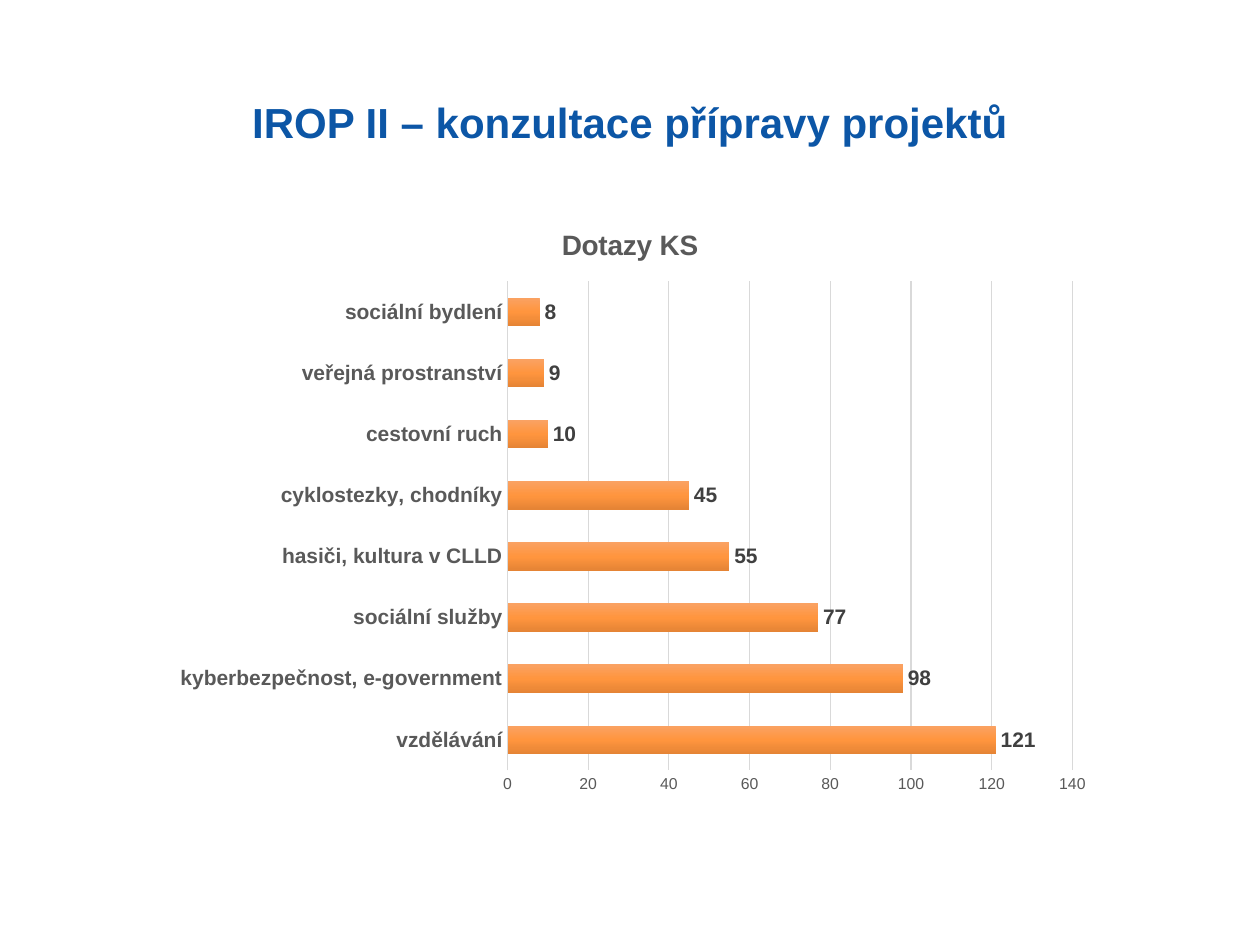
import pptx
import pptx.chart.data
import pptx.dml.color
import pptx.enum.chart
import pptx.enum.text
import pptx.oxml
import pptx.oxml.ns
import pptx.util
from pptx.util import Pt

# Content
TITLE = "IROP II – konzultace přípravy projektů"
CHART_TITLE = "Dotazy KS"
QUERIES = [
    ("vzdělávání", 121),
    ("kyberbezpečnost, e-government", 98),
    ("sociální služby", 77),
    ("hasiči, kultura v CLLD", 55),
    ("cyklostezky, chodníky", 45),
    ("cestovní ruch", 10),
    ("veřejná prostranství", 9),
    ("sociální bydlení", 8),
]
BAR_GRADIENT = [(0, "FAA263"), (50, "FF953E"), (100, "E58435")]
PLOT_LAYOUT = {"x": 0.37, "y": 0.13, "w": 0.6, "h": 0.81}
FONT = "Arial"
GRAY, GRID = "595959", "D9D9D9"


def color(value):
    return pptx.dml.color.RGBColor.from_string(value)


def style(font, size, value, bold=False):
    font.name, font.size, font.bold = FONT, Pt(size), bold
    font.color.rgb = color(value)


def set_line(line, value, width):
    line.color.rgb = color(value)
    line.width = Pt(width)


def set_gradient(series):
    stops = "".join(
        f'<a:gs pos="{position * 1000}"><a:srgbClr val="{value}"/></a:gs>'
        for position, value in BAR_GRADIENT)
    gradient = pptx.oxml.parse_xml(
        f'<a:gradFill {pptx.oxml.ns.nsdecls("a")} rotWithShape="1">'
        f'<a:gsLst>{stops}</a:gsLst><a:lin ang="5400000" scaled="0"/></a:gradFill>')
    series.format.fill.solid()
    properties = series.format.fill._xPr
    solid = properties.find(pptx.oxml.ns.qn("a:solidFill"))
    properties.replace(solid, gradient)


def set_plot_layout(chart):
    area = chart._chartSpace.chart.plotArea
    for layout in area.findall(pptx.oxml.ns.qn("c:layout")):
        area.remove(layout)
    modes = '<c:xMode val="edge"/><c:yMode val="edge"/>'
    values = "".join(f'<c:{key} val="{value}"/>' for key, value in PLOT_LAYOUT.items())
    area.insert(0, pptx.oxml.parse_xml(
        f'<c:layout {pptx.oxml.ns.nsdecls("c")}><c:manualLayout>'
        f'<c:layoutTarget val="inner"/>{modes}{values}</c:manualLayout></c:layout>'))


presentation = pptx.Presentation()
presentation.slide_width, presentation.slide_height = Pt(720), Pt(540)
slide = presentation.slides.add_slide(presentation.slide_layouts[6])

# Slide title
title_box = slide.shapes.add_textbox(Pt(61), Pt(22), Pt(598), Pt(95))
frame = title_box.text_frame
frame.word_wrap = True
frame.vertical_anchor = pptx.enum.text.MSO_ANCHOR.MIDDLE
paragraph = frame.paragraphs[0]
paragraph.alignment = pptx.enum.text.PP_ALIGN.CENTER
run = paragraph.add_run()
run.text = TITLE
style(run.font, 24, "0C56A6", True)

# Bar chart
data = pptx.chart.data.CategoryChartData()
data.categories = [name for name, count in QUERIES]
data.add_series("Series 1", [count for name, count in QUERIES])
chart = slide.shapes.add_chart(
    pptx.enum.chart.XL_CHART_TYPE.BAR_CLUSTERED,
    Pt(91), Pt(116), Pt(538), Pt(345), data).chart
style(chart.font, 10, "000000")
chart.has_legend = False
chart.has_title = True
chart.chart_title.include_in_layout = False
run = chart.chart_title.text_frame.paragraphs[0].add_run()
run.text = CHART_TITLE
style(run.font, 16, GRAY, True)
set_plot_layout(chart)

# Bars and their labels
plot = chart.plots[0]
plot.gap_width, plot.overlap = 115, -20
plot.vary_by_categories = False
series = plot.series[0]
set_gradient(series)
labels = series.data_labels
labels.show_value = True
labels.position = pptx.enum.chart.XL_LABEL_POSITION.OUTSIDE_END
style(labels.font, 12, "404040", True)

# Axes
categories, values = chart.category_axis, chart.value_axis
for axis in (categories, values):
    axis.major_tick_mark = axis.minor_tick_mark = pptx.enum.chart.XL_TICK_MARK.NONE
style(categories.tick_labels.font, 12, GRAY, True)
set_line(categories.format.line, GRID, 1)
style(values.tick_labels.font, 9, GRAY)
values.format.line.fill.background()
values.minimum_scale, values.maximum_scale, values.major_unit = 0, 140, 20
values.has_major_gridlines = True
set_line(values.major_gridlines.format.line, GRID, 0.75)

presentation.save("out.pptx")
